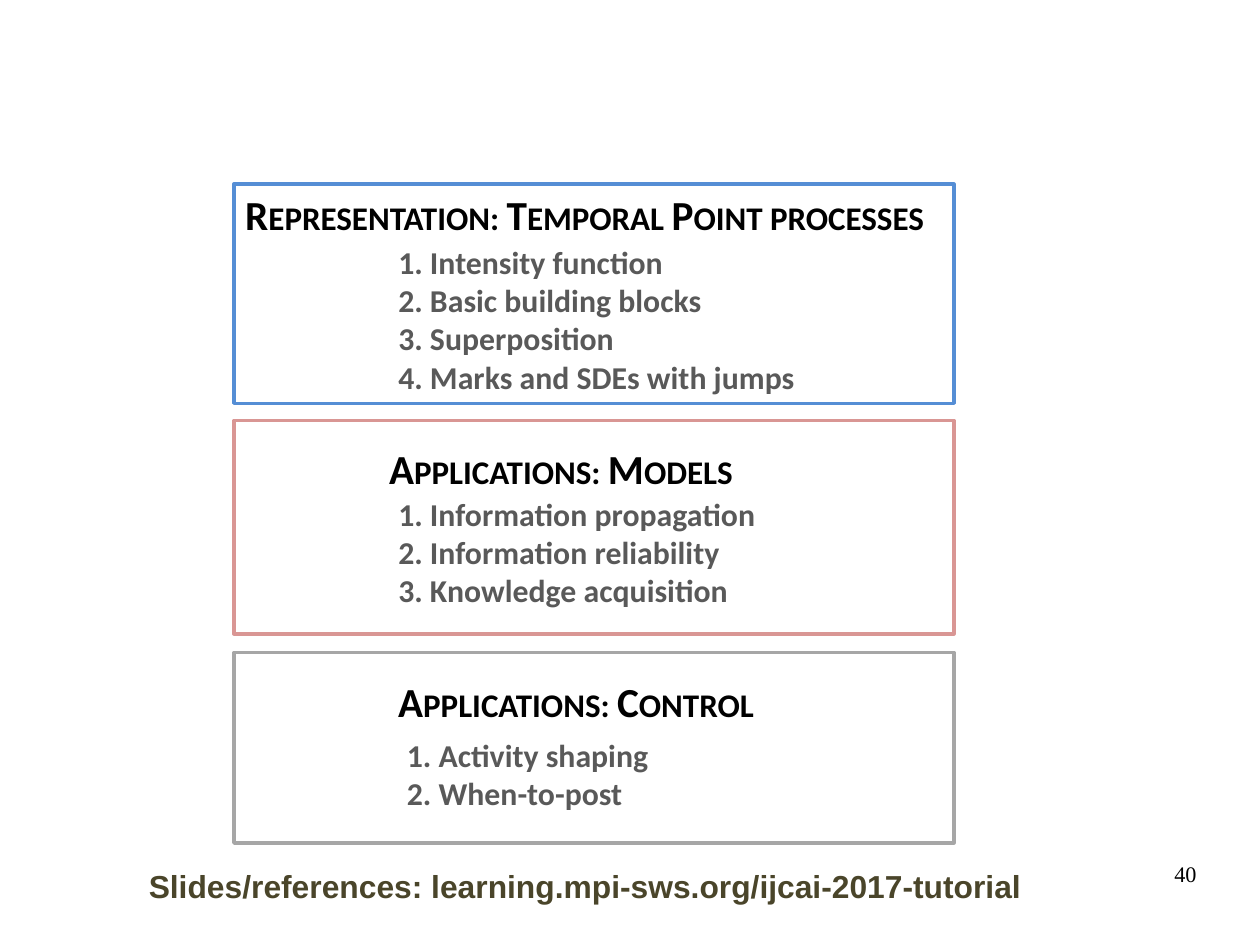
from pptx import Presentation
from pptx.dml.color import RGBColor
from pptx.enum.shapes import MSO_SHAPE
from pptx.enum.text import MSO_ANCHOR, PP_ALIGN
from pptx.util import Pt

RECTANGLE = MSO_SHAPE.RECTANGLE
LEFT, RIGHT = PP_ALIGN.LEFT, PP_ALIGN.RIGHT
TOP, MIDDLE = MSO_ANCHOR.TOP, MSO_ANCHOR.MIDDLE

COLORS = {
    "black": "000000",
    "topic": "595959",
    "footer": "4A452A",
    "blue": "558ED5",
    "red": "D99694",
    "gray": "A6A6A6",
}

deck = Presentation()
deck.slide_width, deck.slide_height = Pt(793.75), Pt(595.25)
page = deck.slides.add_slide(deck.slide_layouts[6])


def add_text(text, left, top, width, height, *, size, color, font="Calibri",
             bold=True, small_caps=False, align=LEFT, anchor=TOP, inset=True):
    box = page.shapes.add_textbox(Pt(left), Pt(top), Pt(width), Pt(height))
    frame = box.text_frame
    frame.word_wrap = True
    frame.vertical_anchor = anchor
    if not inset:
        frame.margin_left = frame.margin_right = 0
        frame.margin_top = frame.margin_bottom = 0
    for index, line in enumerate(text.split("\n")):
        para = frame.paragraphs[0] if index == 0 else frame.add_paragraph()
        para.alignment = align
        span = para.add_run()
        span.text = line
        span.font.name = font
        span.font.size = Pt(size)
        span.font.bold = bold
        span.font.color.rgb = RGBColor.from_string(COLORS[color])
        if small_caps:
            span.font._element.set("cap", "small")


# Sections: frame color, top and height; heading and its place; topics and their place
sections = [
    ("blue", 115.9, 138.2,
     "Representation: Temporal Point processes", (147.4, 115.9, 459.4, 38.9),
     ["Intensity function", "Basic building blocks", "Superposition",
      "Marks and SDEs with jumps"], (243.8, 149.5)),
    ("red", 264.8, 134.6,
     "Applications: Models", (238, 275.5, 294.5, 38.9),
     ["Information propagation", "Information reliability",
      "Knowledge acquisition"], (243.8, 308.2)),
    ("gray", 410.9, 120.2,
     "Applications: Control", (243.8, 422.3, 249.1, 38.9),
     ["Activity shaping", "When-to-post"], (249.2, 459.8)),
]

for color, top, height, heading, heading_place, topics, topics_place in sections:
    numbered = "\n".join(f"{number}. {topic}" for number, topic in enumerate(topics, 1))
    add_text(numbered, *topics_place, 289.4, 7.2 + 24.3 * len(topics), size=20, color="topic")
    add_text(heading, *heading_place, size=26, color="black", small_caps=True)

    outline = page.shapes.add_shape(RECTANGLE, Pt(147.4), Pt(top), Pt(453.6), Pt(height))
    outline.shadow.inherit = False
    outline.fill.background()
    outline.line.color.rgb = RGBColor.from_string(COLORS[color])
    outline.line.width = Pt(2)

# Footer and page number
add_text("Slides/references: learning.mpi-sws.org/ijcai-2017-tutorial",
         79.4, 545.5, 564.5, 24.5, size=20, color="footer", font="Arial",
         align=RIGHT, anchor=MIDDLE, inset=False)
add_text("40", 568.8, 542.2, 185, 41, size=14, color="black", font="Times New Roman",
         bold=False, align=RIGHT, inset=False)

deck.save("out.pptx")
